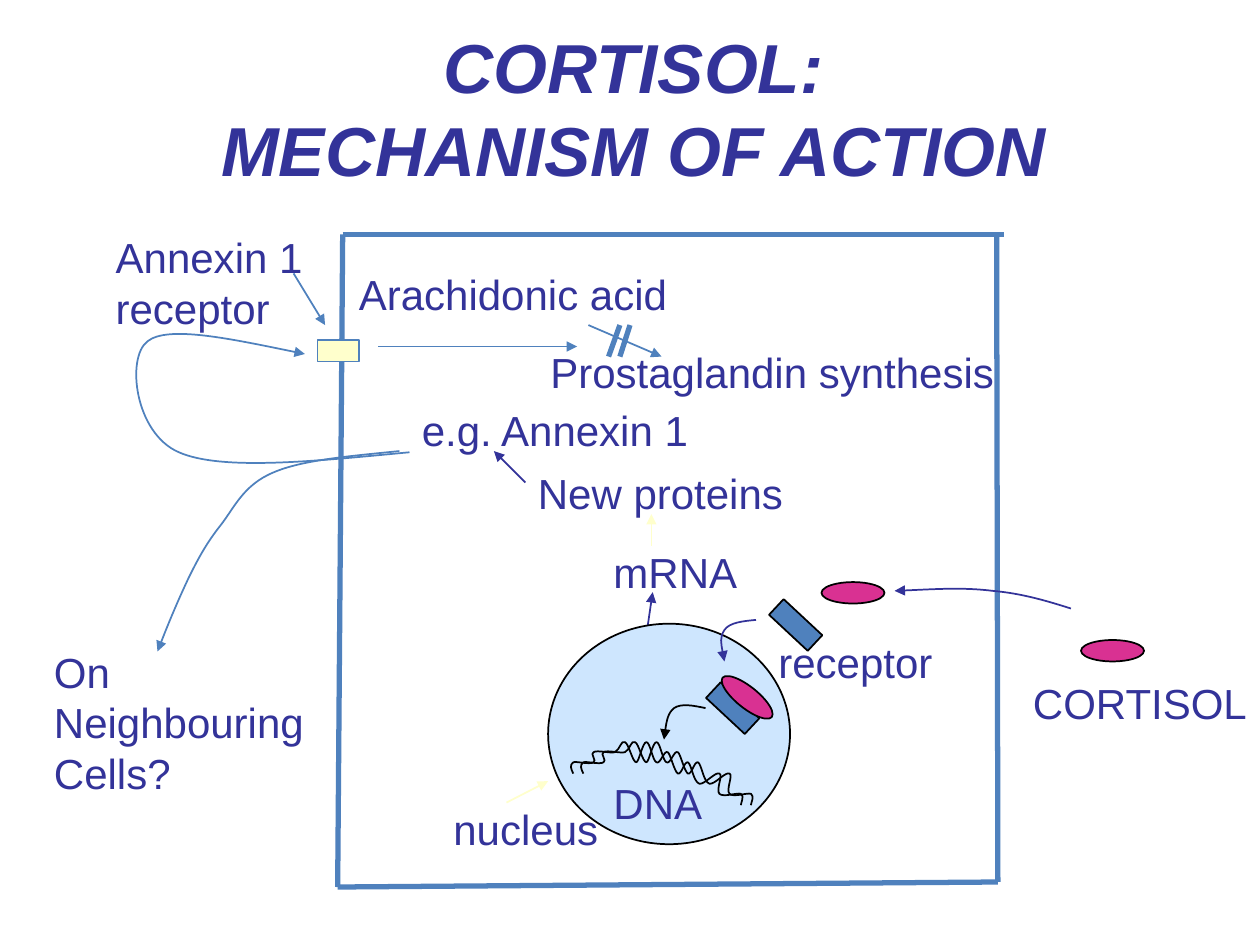
from pptx import Presentation
from pptx.dml.color import RGBColor
from pptx.enum.shapes import MSO_CONNECTOR as Connector, MSO_SHAPE as Preset
from pptx.enum.text import MSO_ANCHOR as Anchor, MSO_AUTO_SIZE as AutoSize, PP_ALIGN as Align
from pptx.oxml.ns import qn
from pptx.util import Pt
from lxml.etree import SubElement

PX = 9144
COLORS = {
    "navy": "333399", "blue": "4F81BD", "pale": "CEE6FE",
    "cream": "FFFFCC", "pink": "D93192", "black": "000000",
}


def style_line(shape, color, width=1, arrow=False):
    shape.line.color.rgb = RGBColor.from_string(COLORS[color])
    shape.line.width = Pt(width)
    properties = shape.element.spPr
    if arrow:
        SubElement(properties.find(qn("a:ln")), qn("a:tailEnd"), type="triangle")
    SubElement(properties, qn("a:effectLst"))


def add_run(paragraph, text, size):
    run = paragraph.add_run()
    run.text = text
    run.font.name = "Arial"
    run.font.size = Pt(size)
    run.font.color.rgb = RGBColor.from_string(COLORS["navy"])
    return run


presentation = Presentation()
presentation.slide_width = 1000 * PX
presentation.slide_height = 750 * PX
slide = presentation.slides.add_slide(presentation.slide_layouts[5])

title = slide.shapes.title
title.left, title.top, title.width, title.height = [n * PX for n in (78, 23, 850, 125)]
title.text_frame.vertical_anchor = Anchor.MIDDLE
title.text_frame.auto_size = AutoSize.NONE
paragraph = title.text_frame.paragraphs[0]
paragraph.alignment = Align.CENTER
for index, text in enumerate(["CORTISOL:", "MECHANISM OF ACTION"]):
    if index:
        paragraph.add_line_break()
    run = add_run(paragraph, text, 39.6)
    run.font.bold = True
    run.font.italic = True

membrane = [(272, 186, 797, 186), (791, 186, 792, 700),
            (792, 700, 268, 704), (268, 704, 272, 186)]
block_marks = [(492, 258, 483, 283), (500, 258, 492, 283)]
arrows = [
    ("cream", 402, 637, 435, 620),
    ("navy", 502, 579, 518, 470),
    ("cream", 517, 433, 517, 408),
    ("navy", 417, 383, 392, 358),
    ("blue", 467, 258, 525, 283),
    ("blue", 233, 217, 258, 258),
    ("blue", 300, 275, 458, 275),
]
connectors = [("blue", 3, False, ends) for ends in membrane + block_marks]
connectors += [(color, 1, True, ends) for color, *ends in arrows]

shapes = [
    (Preset.OVAL, "pale", "black", 0, 435, 495, 192, 175),
    (Preset.RECTANGLE, "blue", "black", 313, 623, 475, 17, 42),
    (Preset.RECTANGLE, "cream", "blue", 0, 252, 270, 33, 17),
    (Preset.OVAL, "pink", "black", 0, 858, 508, 50, 17),
    (Preset.OVAL, "pink", "black", 0, 652, 462, 50, 17),
    (Preset.RECTANGLE, "blue", "black", 313, 573, 541, 17, 42),
    (Preset.OVAL, "pink", "black", 38.7, 568, 545, 50, 17),
]

dna_strand = [
    (455, 614), (453, 610), (452, 607), (455, 605), (457, 604), (468, 607), (471, 605),
    (474, 604), (468, 598), (471, 597), (474, 595), (484, 598), (488, 597),
    (492, 595), (493, 587), (496, 589), (499, 590), (502, 605), (505, 605),
    (507, 605), (510, 589), (513, 589), (516, 589), (518, 604), (521, 605),
    (524, 607), (527, 595), (530, 597), (532, 598), (535, 612), (538, 614),
    (541, 615), (543, 604), (546, 605), (549, 607), (550, 620), (555, 622),
    (559, 623), (568, 612), (571, 614), (574, 615), (568, 627), (571, 630),
    (574, 633), (585, 629), (588, 630), (591, 632), (588, 637), (588, 639),
]
curves = [("black", False, [(x + shift, y) for x, y in dna_strand]) for shift in (0, 8)]
curves += [
    ("blue", True, [(325, 359), (251, 366), (176, 374), (142, 359), (107, 344),
                    (100, 284), (117, 271), (133, 258), (188, 270), (242, 281)]),
    ("blue", True, [(317, 358), (278, 362), (240, 365), (217, 375), (193, 385),
                    (186, 403), (175, 417), (164, 431), (158, 442), (150, 458),
                    (142, 475), (133, 496), (125, 517)]),
    ("black", True, [(560, 562), (550, 560), (541, 558), (535, 562),
                     (530, 566), (528, 577), (527, 587)]),
    ("navy", True, [(850, 483), (831, 477), (811, 471), (788, 469),
                    (764, 466), (737, 468), (710, 469)]),
    ("navy", True, [(600, 492), (590, 493), (579, 494), (575, 500),
                    (571, 506), (573, 515), (575, 525)]),
]

labels = [
    (608, 500, 143, 50, ["receptor"]),
    (477, 612, 91, 50, ["DNA"]),
    (350, 633, 135, 50, ["nucleus"]),
    (477, 429, 118, 50, ["mRNA"]),
    (417, 366, 215, 50, ["New proteins"]),
    (325, 316, 233, 50, ["e.g. Annexin 1"]),
    (275, 208, 266, 51, ["Arachidonic acid"]),
    (427, 270, 374, 51, ["Prostaglandin synthesis"]),
    (82, 179, 170, 91, ["Annexin 1", "receptor"]),
    (33, 508, 220, 131, ["On", "Neighbouring", "Cells?"]),
    (810, 533, 190, 50, ["CORTISOL"]),
]

for color, width, arrow, ends in connectors:
    connector = slide.shapes.add_connector(Connector.STRAIGHT, *[n * PX for n in ends])
    style_line(connector, color, width, arrow)

for preset, fill, outline, rotation, *box in shapes:
    shape = slide.shapes.add_shape(preset, *[n * PX for n in box])
    shape.rotation = rotation
    shape.fill.solid()
    shape.fill.fore_color.rgb = RGBColor.from_string(COLORS[fill])
    style_line(shape, outline)

for color, arrow, points in curves:
    builder = slide.shapes.build_freeform(*points[0], scale=PX)
    builder.add_line_segments(points[1:], close=False)
    curve = builder.convert_to_shape()
    curve.fill.background()
    style_line(curve, color, arrow=arrow)
    outline = next(curve.element.iter(qn("a:path")))
    segments = outline.findall(qn("a:lnTo"))
    for start in range(0, len(segments), 3):
        bezier = SubElement(outline, qn("a:cubicBezTo"))
        for segment in segments[start:start + 3]:
            bezier.append(segment[0])
            outline.remove(segment)

for left, top, width, height, lines in labels:
    label = slide.shapes.add_textbox(left * PX, top * PX, width * PX, height * PX)
    frame = label.text_frame
    frame.word_wrap = False
    frame.auto_size = AutoSize.SHAPE_TO_FIT_TEXT
    for index, text in enumerate(lines):
        paragraph = frame.add_paragraph() if index else frame.paragraphs[0]
        add_run(paragraph, text, 24)

presentation.save("out.pptx")
